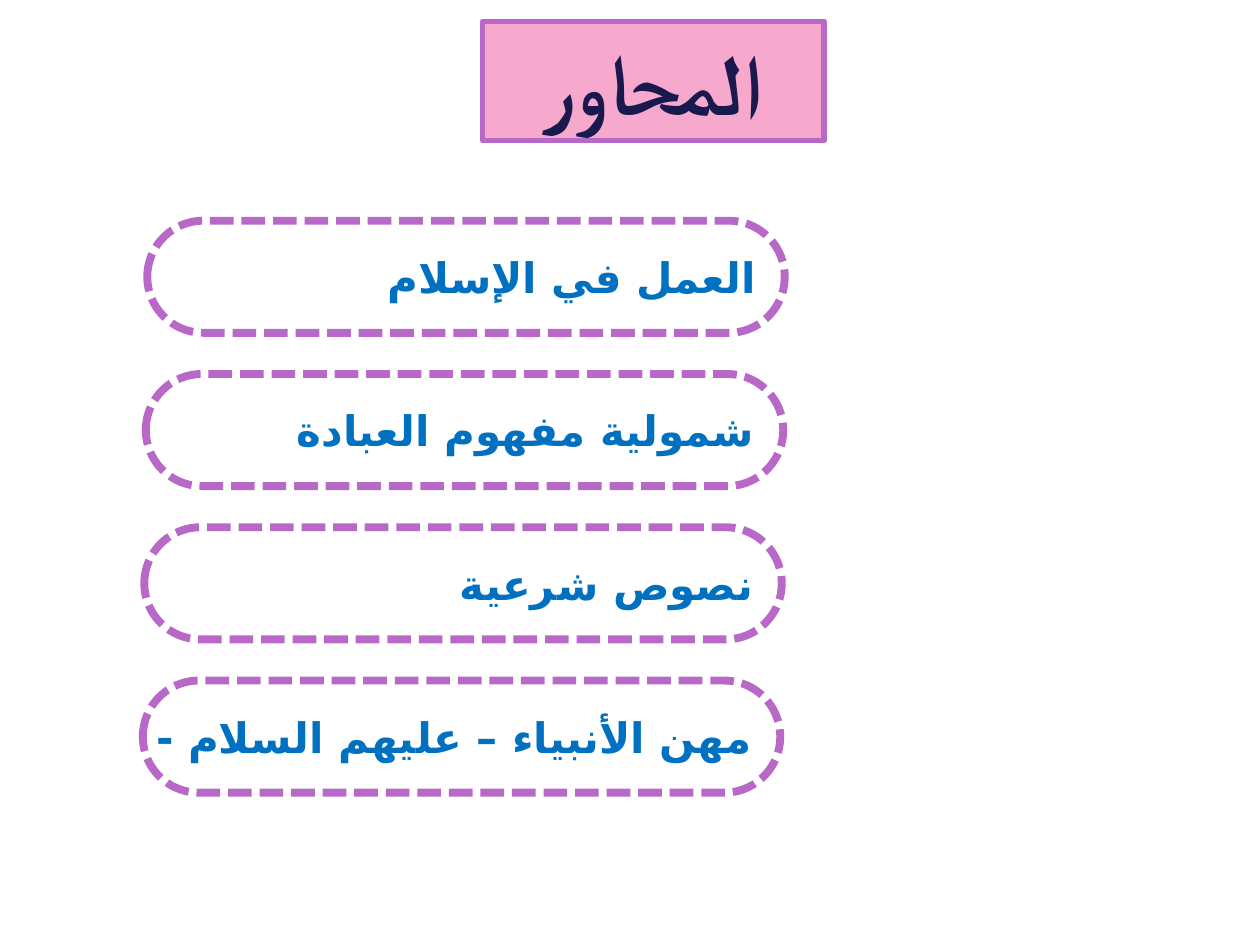
from lxml.etree import SubElement
from pptx import Presentation
from pptx.dml.color import RGBColor
from pptx.enum.dml import MSO_LINE as Dash
from pptx.enum.shapes import MSO_SHAPE as Kind
from pptx.enum.text import MSO_ANCHOR as Anchor, MSO_AUTO_SIZE as Auto, PP_ALIGN as Align
from pptx.oxml.ns import qn
from pptx.util import Cm, Pt

TOPICS = [
    "العمل في الإسلام",
    "شمولية مفهوم العبادة",
    "نصوص شرعية",
    "مهن الأنبياء – عليهم السلام -",
]
PURPLE = "B869C8"


def paint(target, color):
    if hasattr(target, "solid"):
        target.solid()
        target = target.fore_color
    target.rgb = RGBColor.from_string(color)


def outline(shape, fill, width, dash=None):
    paint(shape.fill, fill)
    paint(shape.line.color, PURPLE)
    shape.line.width = Pt(width)
    if dash:
        shape.line.dash_style = dash


def write(shape, text, size, color, font, align, wrap=True, rtl=False):
    """Put one bold line in the shape, with the font also set for Arabic script."""
    frame = shape.text_frame
    frame.auto_size = Auto.NONE
    frame.word_wrap = wrap
    frame.vertical_anchor = Anchor.MIDDLE
    para = frame.paragraphs[0]
    para.alignment = align
    if rtl:
        para._p.get_or_add_pPr().set("rtl", "1")
    run = para.add_run()
    run.text = text
    run.font.size = Pt(size)
    run.font.bold = True
    run.font.name = font
    paint(run.font.color, color)
    SubElement(run._r.get_or_add_rPr(), qn("a:cs"), typeface=font)


def add_title(slide, text):
    title = slide.shapes.title
    title.left, title.top = Cm(9.73), Cm(0.43)
    title.width, title.height = Cm(6.88), Cm(2.41)
    outline(title, "F6A8CD", 3)
    write(title, text, size=49, color="19194D", font="Arial", align=Align.CENTER)


def add_topic(slide, text, left, top):
    pill = slide.shapes.add_shape(Kind.ROUNDED_RECTANGLE, left, top, Cm(12.85), Cm(2.26))
    pill.adjustments[0] = 0.5
    pill.shadow.inherit = False
    outline(pill, "FFFFFF", 4.5, Dash.SQUARE_DOT)
    write(pill, text, size=24, color="0070C0", font="DejaVu Sans",
          align=Align.RIGHT, wrap=False, rtl=True)


def main():
    deck = Presentation()
    deck.slide_width, deck.slide_height = Cm(25.4), Cm(19.05)
    slide = deck.slides.add_slide(deck.slide_layouts[5])
    add_title(slide, "المحاور")
    for row, text in enumerate(TOPICS):
        # Each pill sits slightly further left than the one above it.
        add_topic(slide, text, Cm(2.97 - 0.03 * row), Cm(4.45 + 3.09 * row))
    deck.save("out.pptx")


if __name__ == "__main__":
    main()
